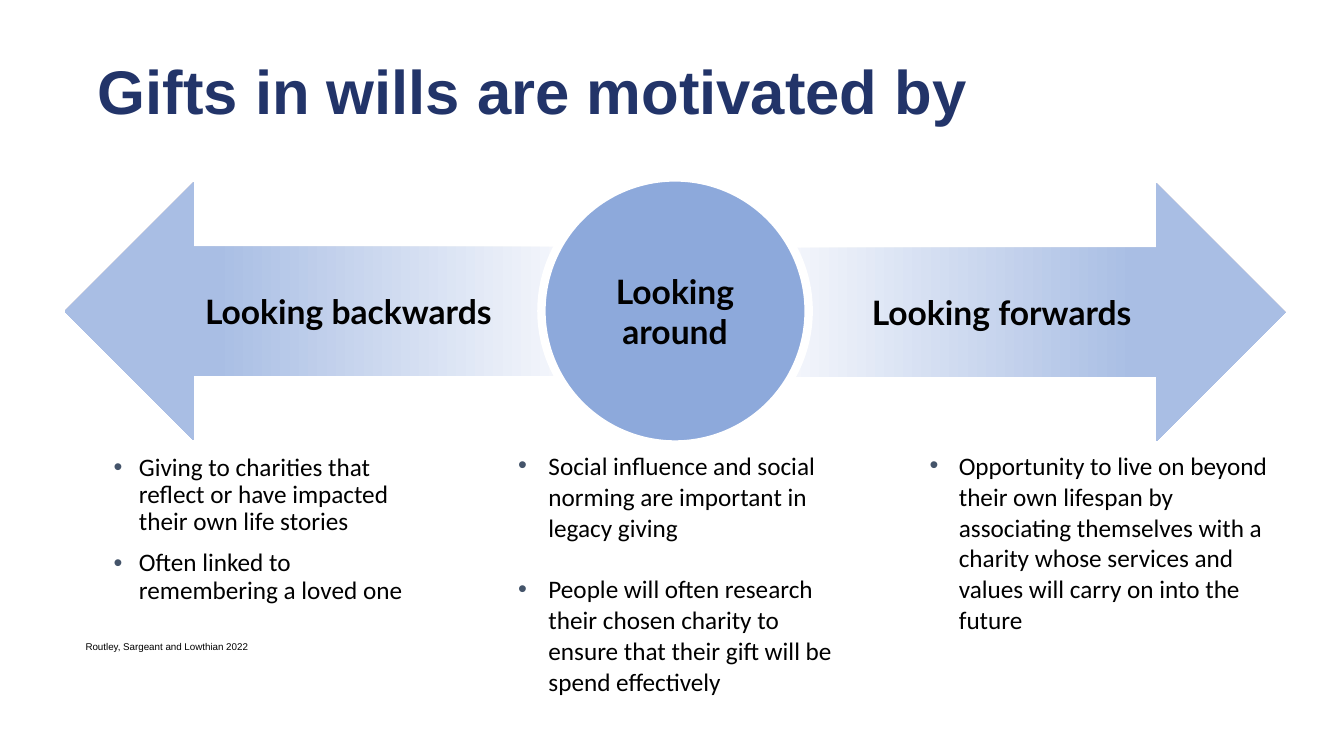
import copy

import pptx
import pptx.dml.color
import pptx.enum.shapes
import pptx.enum.text
import pptx.oxml
import pptx.oxml.ns
import pptx.util

Inches = pptx.util.Inches
Pt = pptx.util.Pt
SHAPE = pptx.enum.shapes.MSO_SHAPE
ALIGN = pptx.enum.text.PP_ALIGN
ANCHOR = pptx.enum.text.MSO_ANCHOR

BLACK, NAVY, SLATE = "000000", "223469", "44546A"
PALE, SKY, BLUE, WHITE = "F5F7FC", "A9BEE4", "8DA9DB", "FFFFFF"


def color(code):
    return pptx.dml.color.RGBColor.from_string(code)


class Deck:
    def __init__(self):
        self.prs = pptx.Presentation()
        self.prs.slide_width = Inches(13.33)
        self.prs.slide_height = Inches(7.5)
        self.slide = self.prs.slides.add_slide(self.prs.slide_layouts[5])
        self.shapes = self.slide.shapes

    def add_run(self, para, text, size, font, ink=BLACK, bold=False):
        run = para.add_run()
        run.text = text
        run.font.size = Pt(size)
        run.font.name = font
        run.font.bold = bold
        run.font.color.rgb = color(ink)

    def title(self, text, left, top, width, height):
        box = self.shapes.title
        box.left, box.top = Inches(left), Inches(top)
        box.width, box.height = Inches(width), Inches(height)
        frame = box.text_frame
        frame.auto_size = pptx.enum.text.MSO_AUTO_SIZE.NONE
        frame.vertical_anchor = ANCHOR.MIDDLE
        para = frame.paragraphs[0]
        para.alignment = ALIGN.LEFT
        para.line_spacing = 0.9
        self.add_run(para, text, 44, "Arial", NAVY, True)

    def box(self, left, top, width, height):
        box = self.shapes.add_textbox(
            Inches(left), Inches(top), Inches(width), Inches(height))
        box.text_frame.word_wrap = True
        return box.text_frame

    def bullet(self, para, indent):
        props = para._p.get_or_add_pPr()
        props.set("marL", str(Inches(indent)))
        props.set("indent", str(-Inches(indent)))
        space = pptx.oxml.ns.nsdecls("a")
        for xml in (
            f'<a:buClr {space}><a:srgbClr val="{SLATE}"/></a:buClr>',
            f'<a:buFont {space} typeface="Arial"/>',
            f'<a:buChar {space} char="•"/>',
        ):
            props.append(pptx.oxml.parse_xml(xml))

    def points(self, texts, left, width, indent, spacing, gap, inset):
        frame = self.box(left, 4.46, width, 1.82)
        if not inset:
            frame.margin_left = frame.margin_right = 0
            frame.margin_top = frame.margin_bottom = 0
        for i, text in enumerate(texts):
            para = frame.add_paragraph() if i else frame.paragraphs[0]
            self.bullet(para, indent)
            para.line_spacing = spacing
            if i:
                para.space_before = Pt(gap)
            self.add_run(para, text, 18, "Calibri")

    def note(self, text, left, top, width, height):
        para = self.box(left, top, width, height).paragraphs[0]
        para.line_spacing = 0.7
        self.add_run(para, text, 7, "Arial")

    def shape(self, kind, text, left, top, width, height):
        item = self.shapes.add_shape(
            kind, Inches(left), Inches(top), Inches(width), Inches(height))
        item.shadow.inherit = False
        frame = item.text_frame
        frame.word_wrap = True
        frame.vertical_anchor = ANCHOR.MIDDLE
        para = frame.paragraphs[0]
        para.alignment = ALIGN.CENTER
        self.add_run(para, text, 24, "Lato", bold=True)
        return item

    def arrow(self, text, left, top, flip=False):
        item = self.shape(SHAPE.RIGHT_ARROW, text, left, top, 4.99, 2.56)
        item.line.fill.background()
        item.fill.gradient()
        item.fill.gradient_angle = 0
        first, last = item.fill.gradient_stops
        first.color.rgb, first.position = color(PALE), 0
        last.color.rgb, last.position = color(SKY), 1
        # Hold the full tint over the arrow head
        final = item._element.spPr.findall(".//" + pptx.oxml.ns.qn("a:gs"))[-1]
        final.addprevious(copy.deepcopy(final))
        item.fill.gradient_stops[1].position = 0.7
        if flip:
            item._element.spPr.xfrm.set("flipH", "1")

    def circle(self, text, left, top, size):
        item = self.shape(SHAPE.OVAL, text, left, top, size, size)
        item.fill.solid()
        item.fill.fore_color.rgb = color(BLUE)
        item.line.color.rgb = color(WHITE)
        item.line.width = Pt(6)


def main():
    deck = Deck()
    deck.title("Gifts in wills are motivated by", 0.87, 0.21, 11.5, 1.45)

    # Columns of points and the source
    deck.points([
        "Giving to charities that reflect or have impacted their own life stories",
        "Often linked to remembering a loved one",
    ], 1.03, 3.33, 0.25, 0.9, 10, True)
    deck.note("Routley, Sargeant and Lowthian 2022", 0.75, 6.34, 11.83, 0.18)
    deck.points([
        "Social influence and social norming are important in legacy giving",
        "People will often research their chosen charity to ensure that "
        "their gift will be spend effectively",
    ], 5.14, 3.33, 0.3, 1.02, 22, False)
    deck.points([
        "Opportunity to live on beyond their own lifespan by associating "
        "themselves with a charity whose services and values will carry on "
        "into the future",
    ], 9.22, 3.53, 0.29, 1.02, 0, False)

    # Arrows with the circle over their tails
    deck.arrow("Looking forwards", 7.76, 1.82)
    deck.arrow("Looking backwards", 0.64, 1.81, flip=True)
    deck.circle("Looking around", 5.37, 1.76, 2.65)

    deck.prs.save("out.pptx")


if __name__ == "__main__":
    main()
